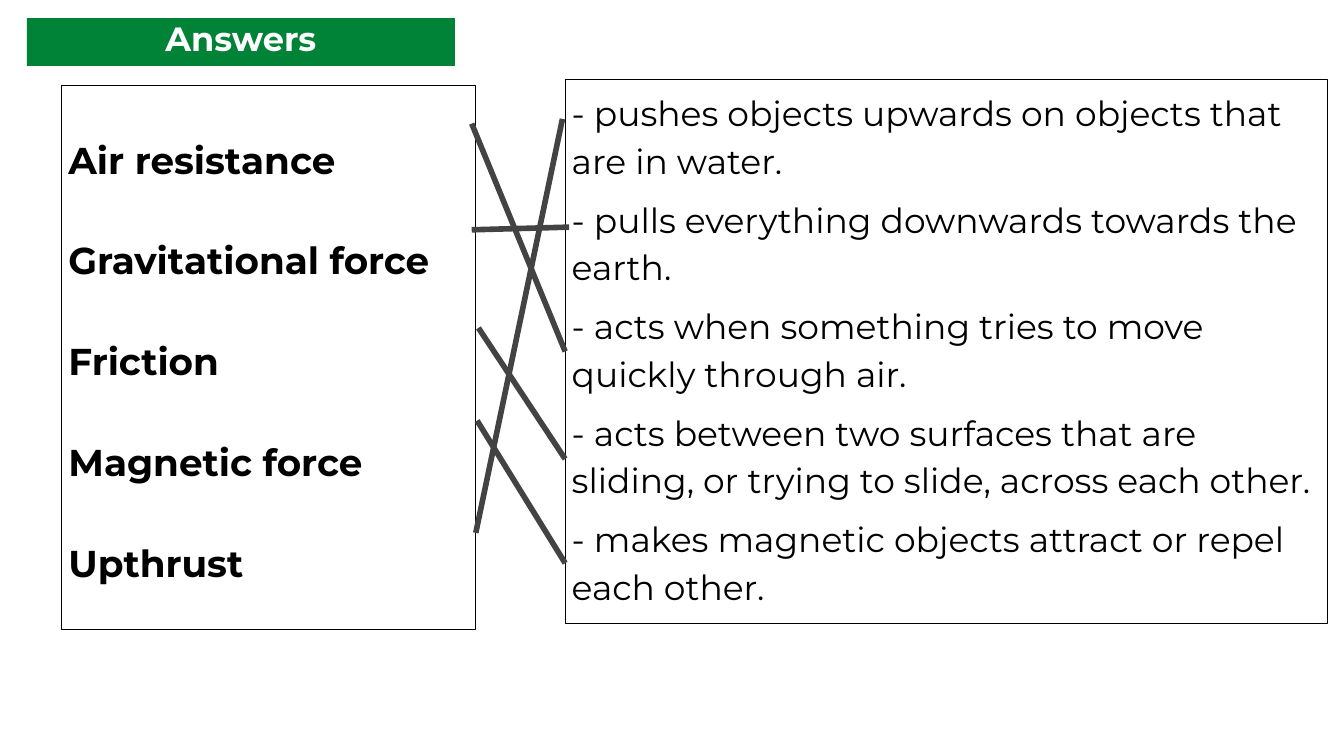
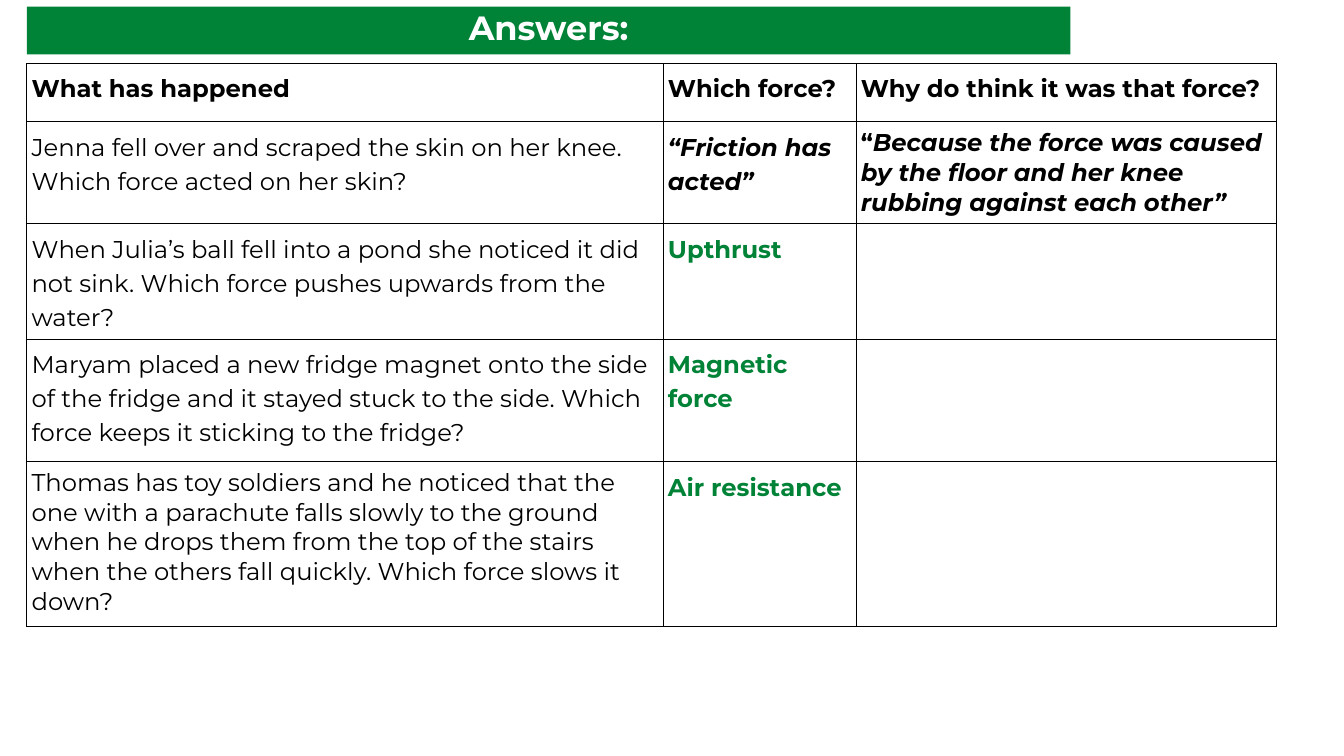
from lxml import etree
from pptx import Presentation
from pptx.dml.color import RGBColor
from pptx.enum.shapes import MSO_CONNECTOR, MSO_SHAPE
from pptx.enum.text import MSO_ANCHOR, PP_ALIGN
from pptx.oxml.ns import qn
from pptx.util import Inches, Pt

GREEN = RGBColor(0x00, 0x82, 0x37)
BLACK = RGBColor(0x00, 0x00, 0x00)
WHITE = RGBColor(0xFF, 0xFF, 0xFF)
GREY = RGBColor(0x43, 0x43, 0x43)
LINE = MSO_CONNECTOR.STRAIGHT
RECT = MSO_SHAPE.RECTANGLE
TOP = MSO_ANCHOR.TOP
LEFT, CENTER = PP_ALIGN.LEFT, PP_ALIGN.CENTER

FONT = "Montserrat"
COLS = 20
EDGE = 0.4

PLAIN = {}
BOLD = {"bold": True}
QUOTE = {"bold": True, "italic": True}
KEY = {"bold": True, "color": GREEN}
WIDE, TIGHT = 1.15, 1.0

FORCES = [
    "Air resistance",
    "Gravitational force",
    "Friction",
    "Magnetic force",
    "Upthrust",
]
CLUES = [
    "- pushes objects upwards on objects that are in water.",
    "- pulls everything downwards towards the earth.",
    "- acts when something tries to move quickly through air.",
    "- acts between two surfaces that are sliding, or trying to slide, across each other.",
    "- makes magnetic objects attract or repel each other.",
]
LINKS = [
    ((7.02, 1.84), (8.41, 5.23)),
    ((7.12, 4.88), (8.41, 6.83)),
    ((7.02, 3.42), (8.47, 3.38)),
    ((7.1, 6.26), (8.41, 8.38)),
    ((7.08, 7.93), (8.37, 1.77)),
]

WIDTHS = [9.47, 2.87, 6.26]
HEIGHTS = [0.87, 1.34, 1.5, 1.82, 2.46]
ROWS = [
    [
        ([("What has happened", BOLD)], WIDE),
        ([("Which force?", BOLD)], WIDE),
        ([("Why do think it was that force?", BOLD)], WIDE),
    ],
    [
        ([("Jenna fell over and scraped the skin on her knee. "
           "Which force acted on her skin?", PLAIN)], WIDE),
        ([("“Friction has acted”", QUOTE)], WIDE),
        ([("“", BOLD),
          ("Because the force was caused by the floor and her knee "
           "rubbing against each other”", QUOTE)], TIGHT),
    ],
    [
        ([("When Julia’s ball fell into a pond she noticed it did not sink. "
           "Which force pushes upwards from the water?", PLAIN)], WIDE),
        ([("Upthrust", KEY)], WIDE),
    ],
    [
        ([("Maryam placed a new fridge magnet onto the side of the fridge and "
           "it stayed stuck to the side. Which force keeps it sticking to the "
           "fridge?", PLAIN)], WIDE),
        ([("Magnetic force", KEY)], WIDE),
    ],
    [
        ([("Thomas has toy soldiers and he noticed that the one with a "
           "parachute falls slowly to the ground when he drops them from the "
           "top of the stairs when the others fall quickly. Which force slows "
           "it down?", PLAIN)], TIGHT),
        ([("Air resistance", KEY)], WIDE),
    ],
]


class Deck:
    def __init__(self):
        self.prs = Presentation()
        self.prs.slide_width = Inches(20)
        self.prs.slide_height = Inches(11.25)
        self.unit = self.prs.slide_width / COLS
        self.slide = None

    def grid(self, *spans):
        return [round(span * self.unit) for span in spans]

    def page(self):
        self.slide = self.prs.slides.add_slide(self.prs.slide_layouts[6])

    def font(self, run, size, color=BLACK, bold=False, italic=False):
        font = run.font
        font.name, font.size = FONT, Pt(size)
        font.bold, font.italic = bold, italic
        font.color.rgb = color

    def block(self, box, texts, size, pad, align=LEFT, space=WIDE, **look):
        shape = self.slide.shapes.add_shape(RECT, *self.grid(*box))
        shape.shadow.inherit = False
        frame = shape.text_frame
        frame.word_wrap = True
        frame.vertical_anchor = TOP
        inset, = self.grid(pad)
        frame.margin_left = frame.margin_right = inset
        frame.margin_top = frame.margin_bottom = inset
        frame.text = "\n".join(texts)
        for place, para in enumerate(frame.paragraphs):
            para.alignment = align
            para.line_spacing = space
            para.space_before = Pt(12 if place else 0)
            for run in para.runs:
                self.font(run, size, **look)
        return shape

    def banner(self, text, top, width):
        bar = self.block((EDGE, top, width, 0.71), [text], 36, 0,
                         CENTER, TIGHT, color=WHITE, bold=True)
        bar.fill.solid()
        bar.fill.fore_color.rgb = GREEN
        bar.line.fill.background()

    def panel(self, box, texts, size, space, **look):
        shape = self.block(box, texts, size, 0.1, space=space, **look)
        shape.fill.background()
        shape.line.color.rgb = BLACK
        shape.line.width = Pt(0.75)

    def link(self, start, end):
        line = self.slide.shapes.add_connector(LINE, *self.grid(*start, *end))
        line.line.color.rgb = GREY
        line.line.width = Pt(6)
        etree.SubElement(line._element.spPr, qn("a:effectLst"))

    def border(self, cell):
        props = cell._tc.get_or_add_tcPr()
        for place, side in enumerate(("lnL", "lnR", "lnT", "lnB")):
            edge = etree.Element(qn("a:" + side), w=str(Pt(1)))
            fill = etree.SubElement(edge, qn("a:solidFill"))
            etree.SubElement(fill, qn("a:srgbClr"), val=str(BLACK))
            props.insert(place, edge)

    def label(self, cell, parts, space):
        para = cell.text_frame.paragraphs[0]
        para.line_spacing = space
        for text, look in parts:
            run = para.add_run()
            run.text = text
            self.font(run, 26, **look)

    def table(self, left, top, widths, heights, rows):
        box = self.grid(left, top, sum(widths), sum(heights))
        table = self.slide.shapes.add_table(len(heights), len(widths), *box).table
        table.first_row = table.horz_banding = False
        for col, width in zip(table.columns, self.grid(*widths)):
            col.width = width
        for row, height in zip(table.rows, self.grid(*heights)):
            row.height = height
        side, end = self.grid(0.07, 0.1)
        for cell in table.iter_cells():
            cell.fill.background()
            cell.margin_left = cell.margin_right = side
            cell.margin_top = cell.margin_bottom = end
            self.border(cell)
        for row, items in zip(table.rows, rows):
            for cell, (parts, space) in zip(row.cells, items):
                self.label(cell, parts, space)


def main():
    deck = Deck()

    deck.page()
    deck.banner("Answers", 0.27, 6.37)
    deck.panel((0.92, 1.27, 6.16, 8.09), FORCES, 40, 2.0, bold=True)
    deck.panel((8.41, 1.18, 11.34, 8.09), CLUES, 37, WIDE)
    for start, end in LINKS:
        deck.link(start, end)

    deck.page()
    deck.banner("Answers:", 0.1, 15.53)
    deck.table(EDGE, 0.94, WIDTHS, HEIGHTS, ROWS)

    deck.prs.save("out.pptx")


if __name__ == "__main__":
    main()
